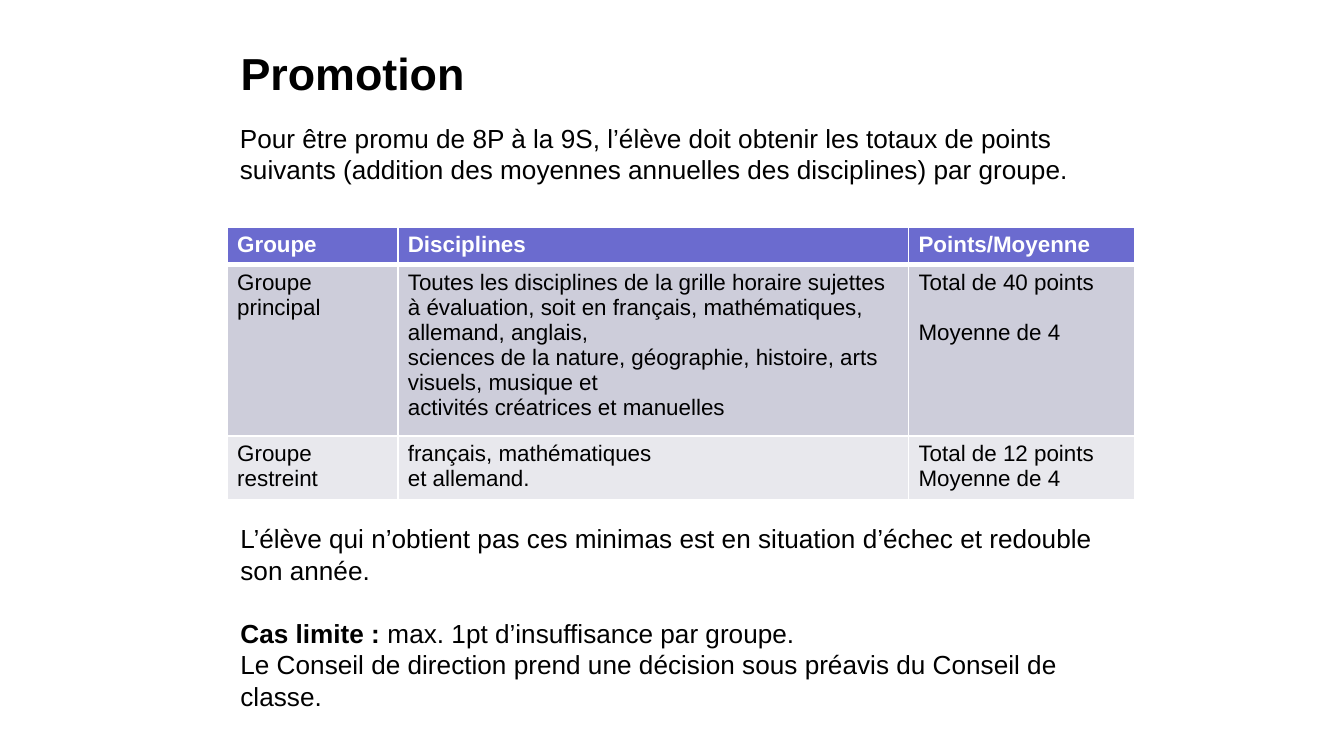
from dataclasses import dataclass

from lxml.etree import SubElement
from pptx import Presentation
from pptx.dml.color import RGBColor
from pptx.enum.text import MSO_ANCHOR, PP_ALIGN
from pptx.oxml.ns import qn
from pptx.util import Inches, Pt


@dataclass(frozen=True)
class Theme:
    font: str = "Arial"
    ink: str = "000000"
    paper: str = "FFFFFF"
    header: str = "6B6BCF"
    bands: tuple = ("CDCDDA", "E8E8ED")
    title: int = 24
    body: int = 14
    cell: int = 12


theme = Theme()


def write(frame, paragraphs, size, color=theme.ink, inset=(7.2, 3.6)):
    frame.word_wrap = True
    frame.margin_left = frame.margin_right = Pt(inset[0])
    frame.margin_top = frame.margin_bottom = Pt(inset[1])
    for index, (gap, runs) in enumerate(paragraphs):
        paragraph = frame.paragraphs[0] if index == 0 else frame.add_paragraph()
        paragraph.alignment = PP_ALIGN.LEFT
        if gap:
            paragraph.space_before = Pt(gap)
        for text, bold in runs:
            run = paragraph.add_run()
            run.text = text
            run.font.name = theme.font
            run.font.size = Pt(size)
            run.font.bold = bold
            run.font.color.rgb = RGBColor.from_string(color)


def add_border(cell, side, points):
    line = SubElement(cell._tc.get_or_add_tcPr(), qn(f"a:{side}"), w=str(Pt(points)))
    fill = SubElement(line, qn("a:solidFill"))
    SubElement(fill, qn("a:srgbClr"), val=theme.paper)


deck = Presentation()
deck.slide_width = Inches(10)
deck.slide_height = deck.slide_width * 9 // 16
slide = deck.slides.add_slide(deck.slide_layouts[5])

left, width = Inches(1.69), Inches(6.75)
tight = (5.4, 2.7)

heading = slide.shapes.title
heading.left, heading.top = left, Inches(0.29)
heading.width, heading.height = Inches(7.38), Inches(0.58)
write(heading.text_frame, [(0, [("Promotion", True)])], theme.title)
heading.text_frame.vertical_anchor = MSO_ANCHOR.TOP

requirement = slide.shapes.add_textbox(Inches(1.71), Inches(0.87), Inches(6.73), Inches(0.82))
write(requirement.text_frame, [
    (0, [("Pour être promu de 8P à la 9S, l’élève doit obtenir les totaux de points suivants "
          "(addition des moyennes annuelles des disciplines) par groupe.", False)]),
], theme.body, inset=tight)

consequence = slide.shapes.add_textbox(left, Inches(3.84), width, Inches(2.05))
write(consequence.text_frame, [
    (0, [("L’élève qui n’obtient pas ces minimas est en situation d’échec et redouble son année.", False)]),
    (17, [("Cas limite : ", True), ("max. 1pt d’insuffisance par groupe.", False)]),
    (0, [("Le Conseil de direction prend une décision sous préavis du Conseil de classe.", False)]),
], theme.body)

groups = [
    [[(0, "Groupe")], [(0, "Disciplines")], [(0, "Points/Moyenne")]],
    [
        [(0, "Groupe principal")],
        [
            (0, "Toutes les disciplines de la grille horaire sujettes à évaluation, "
                "soit en français, mathématiques, allemand, anglais,"),
            (0, "sciences de la nature, géographie, histoire, arts visuels, musique et"),
            (0, "activités créatrices et manuelles"),
        ],
        [(0, "Total de 40 points"), (13.4, "Moyenne de 4")],
    ],
    [
        [(0, "Groupe restreint")],
        [(0, "français, mathématiques"), (0, "et allemand.")],
        [(0, "Total de 12 points"), (0, "Moyenne de 4")],
    ],
]
column_widths = (1.27, 3.8, 1.68)
row_heights = (0.28, 1.27, 0.47)

table = slide.shapes.add_table(3, 3, left, Inches(1.69), width, Inches(sum(row_heights))).table
for column, share in zip(table.columns, column_widths):
    column.width = Inches(share)
for row, share in zip(table.rows, row_heights):
    row.height = Inches(share)

for row_index, group in enumerate(groups):
    is_header = row_index == 0
    color = theme.paper if is_header else theme.ink
    background = theme.header if is_header else theme.bands[row_index - 1]
    for column_index, lines in enumerate(group):
        cell = table.cell(row_index, column_index)
        write(cell.text_frame, [(gap, [(text, is_header)]) for gap, text in lines],
              theme.cell, color, tight)
        cell.margin_left = cell.margin_right = Pt(tight[0])
        cell.margin_top = cell.margin_bottom = Pt(tight[1])
        for side in ("lnL", "lnR", "lnT", "lnB"):
            thick = (row_index, side) in ((0, "lnB"), (1, "lnT"))
            add_border(cell, side, 3 if thick else 1)
        cell.fill.solid()
        cell.fill.fore_color.rgb = RGBColor.from_string(background)

deck.save("out.pptx")
